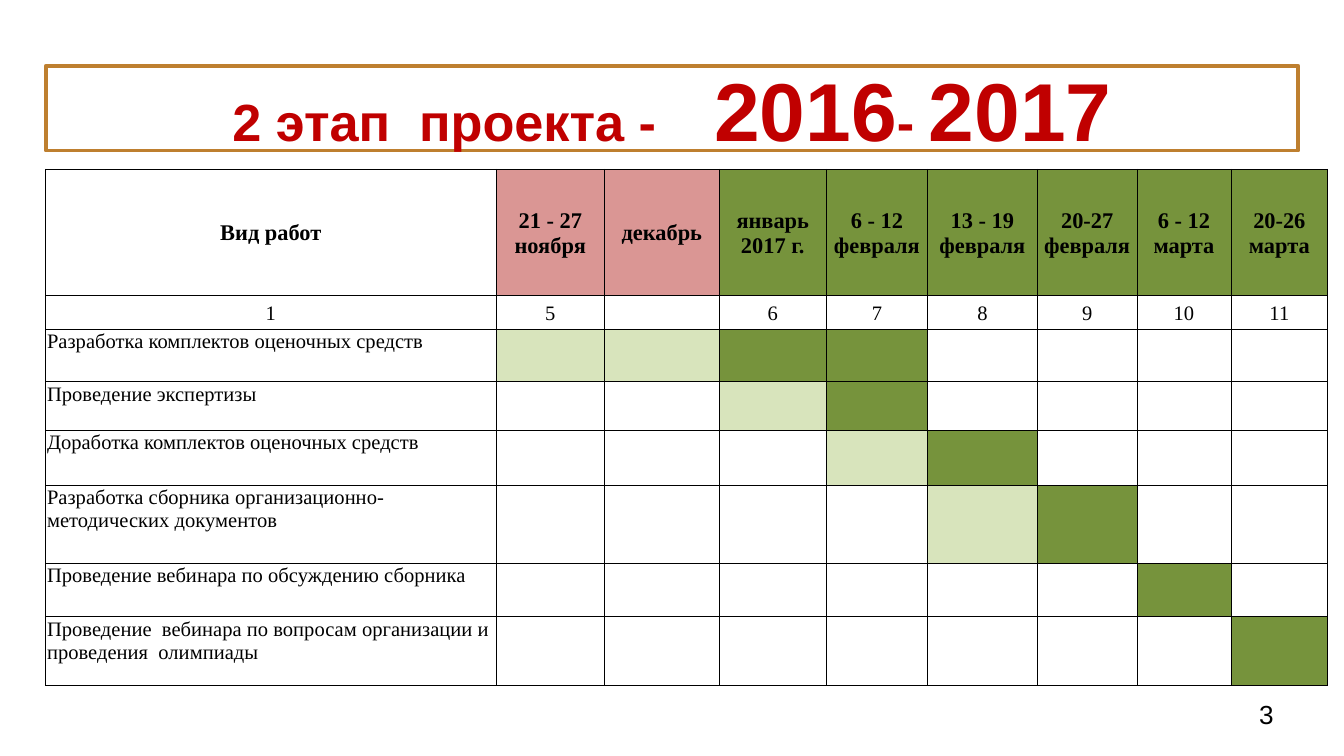
from pptx import Presentation
from pptx.dml.color import RGBColor as Color
from pptx.enum.shapes import MSO_SHAPE as Shape
from pptx.enum.text import MSO_ANCHOR as Anchor, PP_ALIGN as Align
from pptx.oxml.ns import qn
from pptx.util import Inches, Pt
from lxml.etree import SubElement

COLORS = {
    "white": "FFFFFF", "black": "000000", "title": "C00000", "frame": "BE7F2F",
    "past": "DA9694", "work": "76933C", "start": "D8E4BC",
}
TITLE = [("2 этап  проекта -    ", 28), ("2016", 44), ("- ", 28), ("2017", 44)]
PAGE_NUMBER = "3"
HEADERS = [
    ("Вид работ", "white"), ("21 - 27 ноября", "past"), ("декабрь", "past"),
    ("январь 2017 г.", "work"), ("6 - 12 февраля", "work"),
    ("13 - 19 февраля", "work"), ("20-27 февраля", "work"),
    ("6 - 12 марта", "work"), ("20-26 марта", "work"),
]
NUMBERS = ["1", "5", "", "6", "7", "8", "9", "10", "11"]
TASKS = [
    ("Разработка комплектов оценочных средств", {1: "start", 2: "start", 3: "work", 4: "work"}),
    ("Проведение экспертизы", {3: "start", 4: "work"}),
    ("Доработка комплектов оценочных средств", {4: "start", 5: "work"}),
    ("Разработка сборника организационно-методических документов", {5: "start", 6: "work"}),
    ("Проведение вебинара по обсуждению сборника", {7: "work"}),
    ("Проведение  вебинара по вопросам организации и проведения  олимпиады", {8: "work"}),
]
COLUMN_WIDTHS = [3.35, 0.81, 0.85, 0.8, 0.75, 0.82, 0.74, 0.7, 0.72]
ROW_HEIGHTS = [0.94, 0.25, 0.39, 0.36, 0.41, 0.58, 0.4, 0.51]
CELL_FORMAT = {
    "margin_left": Inches(0.01), "margin_right": Inches(0.01),
    "margin_top": Inches(0.01), "margin_bottom": 0,
}
BOX_FORMAT = {
    "margin_left": Inches(0.1), "margin_right": Inches(0.1),
    "margin_top": Inches(0.1), "margin_bottom": Inches(0.1),
    "vertical_anchor": Anchor.MIDDLE, "word_wrap": True,
}


def apply(target, values):
    for name, value in values.items():
        setattr(target, name, value)


def rgb(name):
    return Color.from_string(COLORS[name])


def add_span(para, text, size, face, color="black", bold=False):
    span = para.add_run()
    span.text = text
    apply(span.font, {"size": Pt(size), "name": face, "bold": bold})
    span.font.color.rgb = rgb(color)


def add_borders(cell):
    properties = cell._tc.get_or_add_tcPr()
    for side in ("a:lnL", "a:lnR", "a:lnT", "a:lnB"):
        line = SubElement(properties, qn(side), w=str(Pt(0.5)))
        fill = SubElement(line, qn("a:solidFill"))
        SubElement(fill, qn("a:srgbClr"), val=COLORS["black"])


def fill_cell(cell, text, color, size, bold, centered):
    apply(cell, CELL_FORMAT)
    cell.vertical_anchor = Anchor.MIDDLE if centered else Anchor.TOP
    add_borders(cell)
    if color == "white":
        cell.fill.background()
    else:
        cell.fill.solid()
        cell.fill.fore_color.rgb = rgb(color)
    para = cell.text_frame.paragraphs[0]
    para.alignment = Align.CENTER if centered else Align.LEFT
    if text:
        add_span(para, text, size, "Times New Roman", bold=bold)
    else:
        SubElement(para._p, qn("a:endParaRPr"), sz=str(size * 100))


def add_title(page):
    box = page.shapes.add_shape(
        Shape.RECTANGLE, Inches(0.34), Inches(0.49), Inches(9.32), Inches(0.63))
    box.shadow.inherit = False
    box.fill.solid()
    box.fill.fore_color.rgb = rgb("white")
    box.line.color.rgb = rgb("frame")
    box.line.width = Pt(2)
    apply(box.text_frame, BOX_FORMAT)
    para = box.text_frame.paragraphs[0]
    para.alignment = Align.CENTER
    for text, size in TITLE:
        add_span(para, text, size, "Arial", "title", True)


def add_page_number(page):
    box = page.shapes.add_textbox(Inches(9.27), Inches(5.1), Inches(0.6), Inches(0.43))
    apply(box.text_frame, BOX_FORMAT)
    add_span(box.text_frame.paragraphs[0], PAGE_NUMBER, 14, "Arial")


def add_schedule(page):
    table = page.shapes.add_table(
        len(ROW_HEIGHTS), len(COLUMN_WIDTHS), Inches(0.34), Inches(1.26),
        Inches(sum(COLUMN_WIDTHS)), Inches(sum(ROW_HEIGHTS))).table
    apply(table, {"first_row": False, "horz_banding": False})
    for column, width in zip(table.columns, COLUMN_WIDTHS):
        column.width = Inches(width)
    for row, height in zip(table.rows, ROW_HEIGHTS):
        row.height = Inches(height)

    rows = [HEADERS, [(number, "white") for number in NUMBERS]]
    for task, periods in TASKS:
        rows.append([(task if index == 0 else "", periods.get(index, "white"))
                     for index in range(len(COLUMN_WIDTHS))])
    for row_index, row in enumerate(rows):
        header = row_index == 0
        for column_index, (text, color) in enumerate(row):
            fill_cell(table.cell(row_index, column_index), text, color,
                      12 if header else 11, header, row_index < 2)


def main():
    deck = Presentation()
    width = Inches(10)
    apply(deck, {"slide_width": width, "slide_height": width * 9 // 16})
    page = deck.slides.add_slide(deck.slide_layouts[6])
    add_page_number(page)
    add_title(page)
    add_schedule(page)
    deck.save("out.pptx")


if __name__ == "__main__":
    main()
